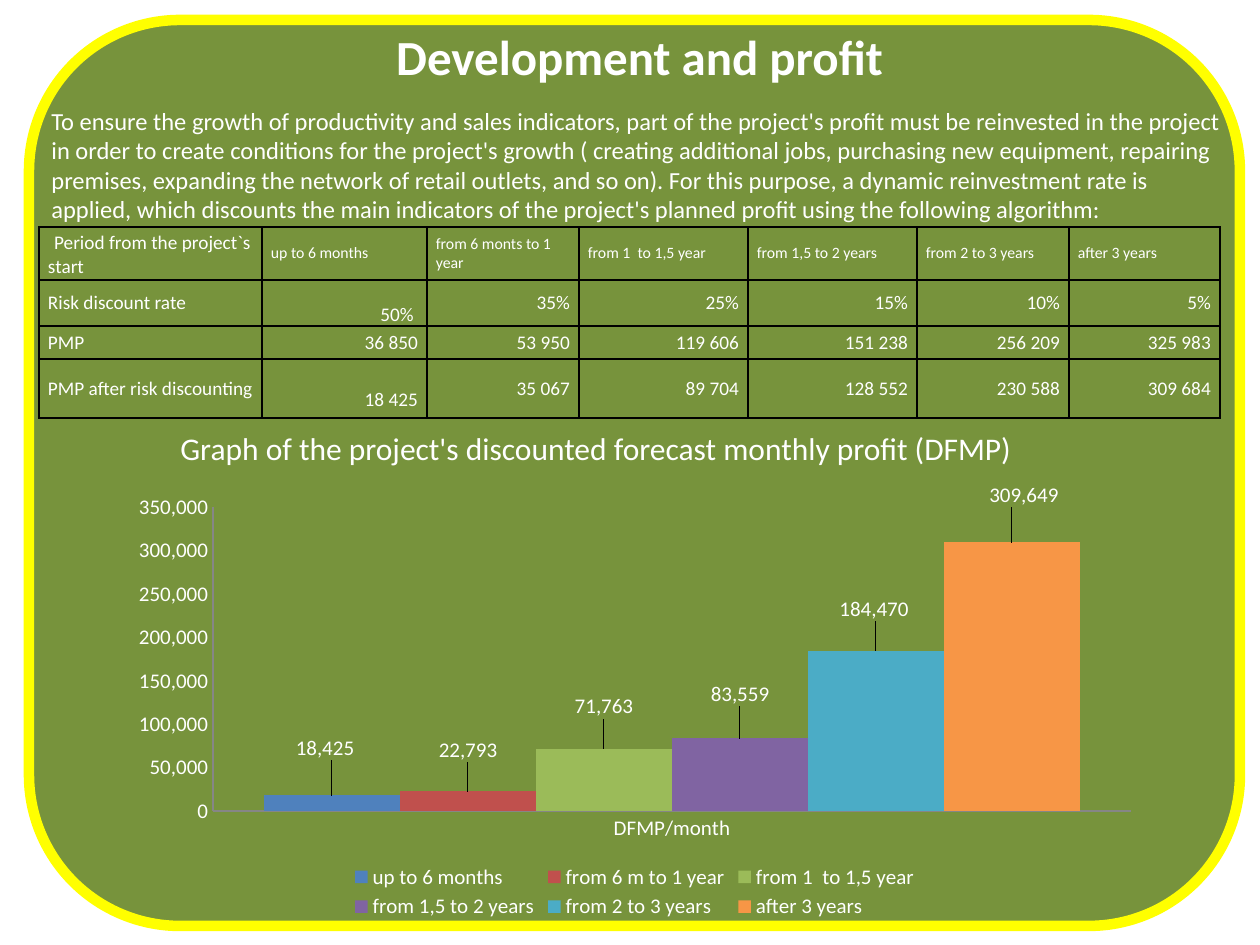
from lxml import etree
from pptx import Presentation
from pptx.chart.data import CategoryChartData
from pptx.dml.color import RGBColor
from pptx.enum.chart import XL_CHART_TYPE, XL_LABEL_POSITION, XL_LEGEND_POSITION, XL_TICK_MARK
from pptx.enum.shapes import MSO_SHAPE
from pptx.enum.text import MSO_ANCHOR, PP_ALIGN
from pptx.oxml import parse_xml
from pptx.oxml.ns import nsdecls, qn
from pptx.util import Pt

CLUSTERED = XL_CHART_TYPE.COLUMN_CLUSTERED
OUTSIDE_END = XL_LABEL_POSITION.OUTSIDE_END
BOTTOM = XL_LEGEND_POSITION.BOTTOM
NO_TICK = XL_TICK_MARK.NONE
ROUNDED = MSO_SHAPE.ROUNDED_RECTANGLE
MIDDLE = MSO_ANCHOR.MIDDLE
LEFT, CENTER, RIGHT = PP_ALIGN.LEFT, PP_ALIGN.CENTER, PP_ALIGN.RIGHT
EMU_PER_PX = 914400 / 126
WHITE = "FFFFFF"


def px(*lengths):
    return [round(length * EMU_PER_PX) for length in lengths]


def style(font, size, color=WHITE, bold=False, name="Calibri"):
    font.size = Pt(size)
    font.bold = bold
    font.name = name
    font.color.rgb = RGBColor.from_string(color)


presentation = Presentation()
presentation.slide_width, presentation.slide_height = px(1260, 945)
slide = presentation.slides.add_slide(presentation.slide_layouts[6])
shapes = slide.shapes

panel = shapes.add_shape(ROUNDED, *px(29, 20, 1211, 906))
panel.shadow.inherit = False
panel.fill.solid()
panel.fill.fore_color.rgb = RGBColor.from_string("77933C")
panel.line.color.rgb = RGBColor.from_string("FFFF00")
panel.line.width = Pt(6)

intro = shapes.add_textbox(*px(39, 20, 1201, 212)).text_frame
intro.word_wrap = True
heading = intro.paragraphs[0]
heading.alignment = CENTER
heading.space_after = Pt(12)
run = heading.add_run()
run.text = "Development and profit"
style(run.font, 28, bold=True)
run = intro.add_paragraph().add_run()
run.text = (
    "To ensure the growth of productivity and sales indicators, part of the project's profit "
    "must be reinvested in the project in order to create conditions for the project's growth "
    "( creating additional jobs, purchasing new equipment, repairing premises, expanding the "
    "network of retail outlets, and so on). For this purpose, a dynamic reinvestment rate is "
    "applied, which discounts the main indicators of the project's planned profit using the "
    "following algorithm:"
)
style(run.font, 14)

profits = [
    ("up to 6 months", 18425, "4F81BD", -7, -30),
    ("from 6 m to 1 year", 22793, "C0504D", 0, -24),
    ("from 1  to 1,5 year", 71763, "9BBB59", 0, -25),
    ("from 1,5 to 2 years", 83559, "8064A2", 0, -27),
    ("from 2 to 3 years", 184470, "4BACC6", -2, -25),
    ("after 3 years", 309649, "F79646", 12, -30),
]
chart_width, chart_height = 1033, 441
chart_data = CategoryChartData(number_format="#,##0")
chart_data.categories = ["DFMP/month"]
for name, value, *_ in profits:
    chart_data.add_series(name, [value])
chart = shapes.add_chart(CLUSTERED, *px(118, 483, chart_width, chart_height), chart_data).chart
chart.has_title = False
style(chart.font, 10, "000000")
chart.has_legend = True
chart.legend.position = BOTTOM
chart.legend.include_in_layout = False
style(chart.legend.font, 12)

for axis in (chart.category_axis, chart.value_axis):
    axis.has_major_gridlines = False
    axis.major_tick_mark = axis.minor_tick_mark = NO_TICK
    axis.format.line.color.rgb = RGBColor.from_string("868686")
    style(axis.tick_labels.font, 12)
chart.value_axis.minimum_scale = 0
chart.value_axis.maximum_scale = 350000
chart.value_axis.major_unit = 50000
chart.value_axis.tick_labels.number_format = "#,##0"
chart.value_axis.tick_labels.number_format_is_linked = False

plot = chart.plots[0]
plot.gap_width = 75
plot.overlap = 0
plot.vary_by_categories = False
layouts = []
for series, (name, value, color, shift_x, shift_y) in zip(plot.series, profits):
    series.format.fill.solid()
    series.format.fill.fore_color.rgb = RGBColor.from_string(color)
    labels = series.data_labels
    labels.show_value = True
    labels.number_format = "#,##0"
    labels.number_format_is_linked = False
    style(labels.font, 12)
    point_label = series.points[0].data_label
    point_label.position = OUTSIDE_END
    style(point_label.font, 12)
    index = chart.element.findall(".//" + qn("c:dLbl"))[-1].find(qn("c:idx"))
    layouts.append((index, {"x": shift_x / chart_width, "y": shift_y / chart_height}))

plot_area = chart.element.find(".//" + qn("c:plotArea"))
for old_layout in plot_area.findall(qn("c:layout")):
    plot_area.remove(old_layout)
inner_plot = {"layoutTarget": "inner", "xMode": "edge", "yMode": "edge",
              "x": 95 / chart_width, "y": 20 / chart_height,
              "w": 918 / chart_width, "h": 307 / chart_height}
layouts.append((None, inner_plot))
for anchor, settings in layouts:
    layout = parse_xml(f"<c:layout {nsdecls('c')}><c:manualLayout/></c:layout>")
    for key, setting in settings.items():
        etree.SubElement(layout[0], qn("c:" + key)).set("val", str(setting))
    if anchor is None:
        plot_area.insert(0, layout)
    else:
        anchor.addnext(layout)

caption = shapes.add_textbox(*px(168, 423, 867, 50)).text_frame
caption.word_wrap = False
run = caption.paragraphs[0].add_run()
run.text = "Graph of the project's discounted forecast monthly profit (DFMP)"
style(run.font, 18)

rows = [
    ["Period from the project`s start", "up to 6 months", "from 6 monts to 1 year",
     "from 1  to 1,5 year", "from 1,5 to 2 years", "from 2 to 3 years", "after 3 years"],
    ["Risk discount rate", "50% ", "35%", "25%", "15%", "10%", "5%"],
    ["PMP", "36 850", "53 950", "119 606", "151 238", "256 209", "325 983"],
    ["PMP after risk discounting", "18 425", "35 067", "89 704", "128 552", "230 588", "309 684"],
]
column_widths = px(223, 165, 152, 169, 169, 152, 151)
row_heights = px(53, 46, 33, 59)
lowered_cells = [(1, 1), (3, 1)]
table = shapes.add_table(len(rows), len(rows[0]), *px(39, 227, 1181, 191)).table
for column, width in zip(table.columns, column_widths):
    column.width = width
for row_index, row in enumerate(rows):
    table.rows[row_index].height = row_heights[row_index]
    for column_index, text in enumerate(row):
        cell = table.cell(row_index, column_index)
        cell.vertical_anchor = MIDDLE
        top = 23 if (row_index, column_index) in lowered_cells else 0
        cell.margin_left, cell.margin_top, cell.margin_right, cell.margin_bottom = px(9, top, 9, 0)
        paragraph = cell.text_frame.paragraphs[0]
        paragraph.alignment = RIGHT if row_index and column_index else LEFT
        if row_index == column_index == 0:
            run = paragraph.add_run()
            run.text = " "
            style(run.font, 14, name="Times New Roman")
        run = paragraph.add_run()
        run.text = text
        style(run.font, 9 if row_index == 0 and column_index else 11)
        properties = cell._tc.get_or_add_tcPr()
        for side in ("lnL", "lnR", "lnT", "lnB"):
            properties.append(parse_xml(
                f'<a:{side} {nsdecls("a")} w="12700"><a:solidFill>'
                f'<a:srgbClr val="000000"/></a:solidFill></a:{side}>'))
        cell.fill.background()

presentation.save("out.pptx")
